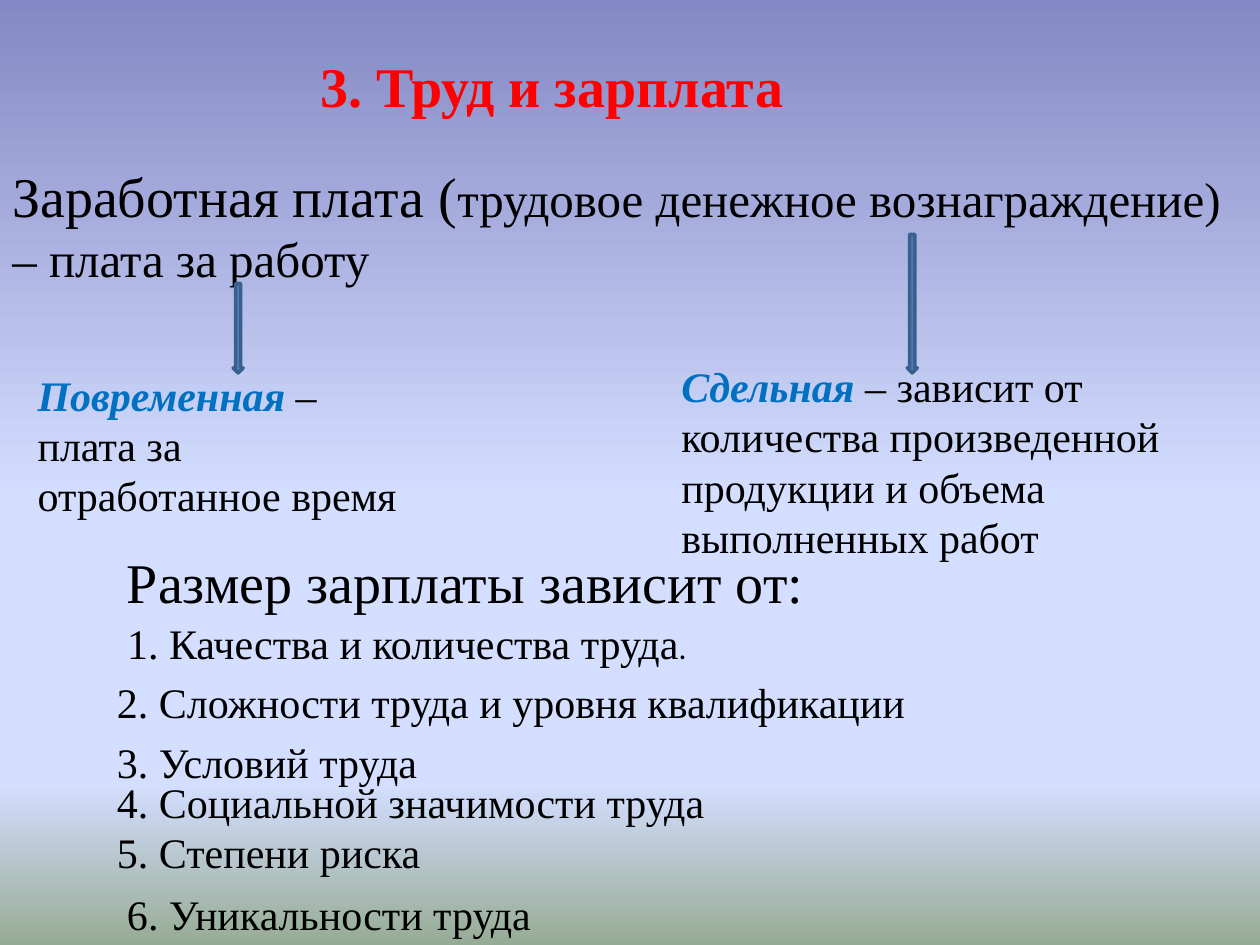
from lxml import etree
from pptx import Presentation
from pptx import util as u
from pptx.dml.color import RGBColor
from pptx.enum import shapes, text
from pptx.oxml.ns import qn

COLORS = {"black": "000000", "red": "FF0000", "blue": "0070C0",
          "arrow": "4F81BD", "edge": "3A5F8C"}
BACKGROUND = {0: "8488C4", 53: "D4DEFF", 83: "D4DEFF", 100: "96AB94"}

deck = Presentation()
deck.slide_width, deck.slide_height = u.Inches(10), u.Inches(7.5)
column, row = deck.slide_width / 100, deck.slide_height / 75

PLAIN = {"name": "Times New Roman", "size": u.Pt(24), "bold": False,
         "italic": False, "color": "black"}
LARGE = PLAIN | {"size": u.Pt(32)}
MEDIUM = PLAIN | {"size": u.Pt(28)}
HEADING = LARGE | {"bold": True, "color": "red"}
TERM = PLAIN | {"bold": True, "italic": True, "color": "blue"}
FULL_STOP = PLAIN | {"name": "Calibri", "size": u.Pt(18)}


def place(left, top, width, height):
    """Turn grid columns and rows into slide lengths."""
    return [round(left * column), round(top * row),
            round(width * column), round(height * row)]


def write(box, spans):
    """Fill a box with one left-aligned paragraph of (words, format) spans."""
    frame = box.text_frame
    frame.word_wrap = True
    frame.auto_size = text.MSO_AUTO_SIZE.SHAPE_TO_FIT_TEXT
    frame.vertical_anchor = text.MSO_ANCHOR.TOP
    para = frame.paragraphs[0]
    para.alignment = text.PP_ALIGN.LEFT
    for words, style in spans:
        span = para.add_run()
        span.text = words
        for key, value in style.items():
            if key == "color":
                span.font.color.rgb = RGBColor.from_string(COLORS[value])
            else:
                setattr(span.font, key, value)


page = deck.slides.add_slide(deck.slide_layouts[5])

# Background: four stops running from top to bottom
fill = page.background.fill
fill.gradient()
fill.gradient_angle = 270
stops = page.background._cSld.find(".//" + qn("a:gsLst"))
for stop in list(stops):
    stops.remove(stop)
for percent, color in BACKGROUND.items():
    stop = etree.SubElement(stops, qn("a:gs"), pos=str(percent * 1000))
    etree.SubElement(stop, qn("a:srgbClr"), val=color)

# Title
title = page.shapes.title
title.left, title.top, title.width, title.height = place(24.4, 3.6, 55.5, 6.4)
write(title, [("3. Труд и зарплата", HEADING)])

# Definition and the two kinds of pay
paragraphs = [
    ((0, 12.3, 100, 11.1),
     [("Заработная плата (", LARGE),
      ("трудовое денежное вознаграждение) – плата за работу", MEDIUM)]),
    ((2, 28.8, 32.3, 13.1),
     [("Повременная", TERM), (" – плата за отработанное время", PLAIN)]),
    ((53.1, 28.1, 43.3, 17.2),
     [("Сдельная ", TERM),
      ("– зависит от количества произведенной продукции "
       "и объема выполненных работ", PLAIN)]),
]
for area, spans in paragraphs:
    write(page.shapes.add_textbox(*place(*area)), spans)

# Arrows from the definition, both ending on the same row
arrow_end = 29.6
for left, top in [(18.5, 22.5), (72, 18.6)]:
    arrow = page.shapes.add_shape(shapes.MSO_SHAPE.DOWN_ARROW,
                                  *place(left, top, 0.8, arrow_end - top))
    arrow.shadow.inherit = False
    arrow.fill.solid()
    arrow.fill.fore_color.rgb = RGBColor.from_string(COLORS["arrow"])
    arrow.line.color.rgb = RGBColor.from_string(COLORS["edge"])
    arrow.line.width = u.Pt(2)

# What pay depends on
outer, inner = 8.3, 9.1
factors = [
    (inner, 43, 74, 6.4, [("Размер зарплаты зависит от:", LARGE)]),
    (inner, 48.5, 62.2, 5,
     [("1. Качества и количества труда", PLAIN), (".", FULL_STOP)]),
    (outer, 53.2, 88.2, 5,
     [("2. Сложности труда и уровня квалификации", PLAIN)]),
    (outer, 58, 86.6, 5, [("3. Условий труда", PLAIN)]),
    (outer, 61.1, 59.8, 5, [("4. Социальной значимости труда", PLAIN)]),
    (outer, 65.1, 67.7, 5, [("5. Степени риска", PLAIN)]),
    (inner, 70, 61.4, 5, [("6. Уникальности труда", PLAIN)]),
]
for *area, spans in factors:
    write(page.shapes.add_textbox(*place(*area)), spans)

deck.save("out.pptx")
